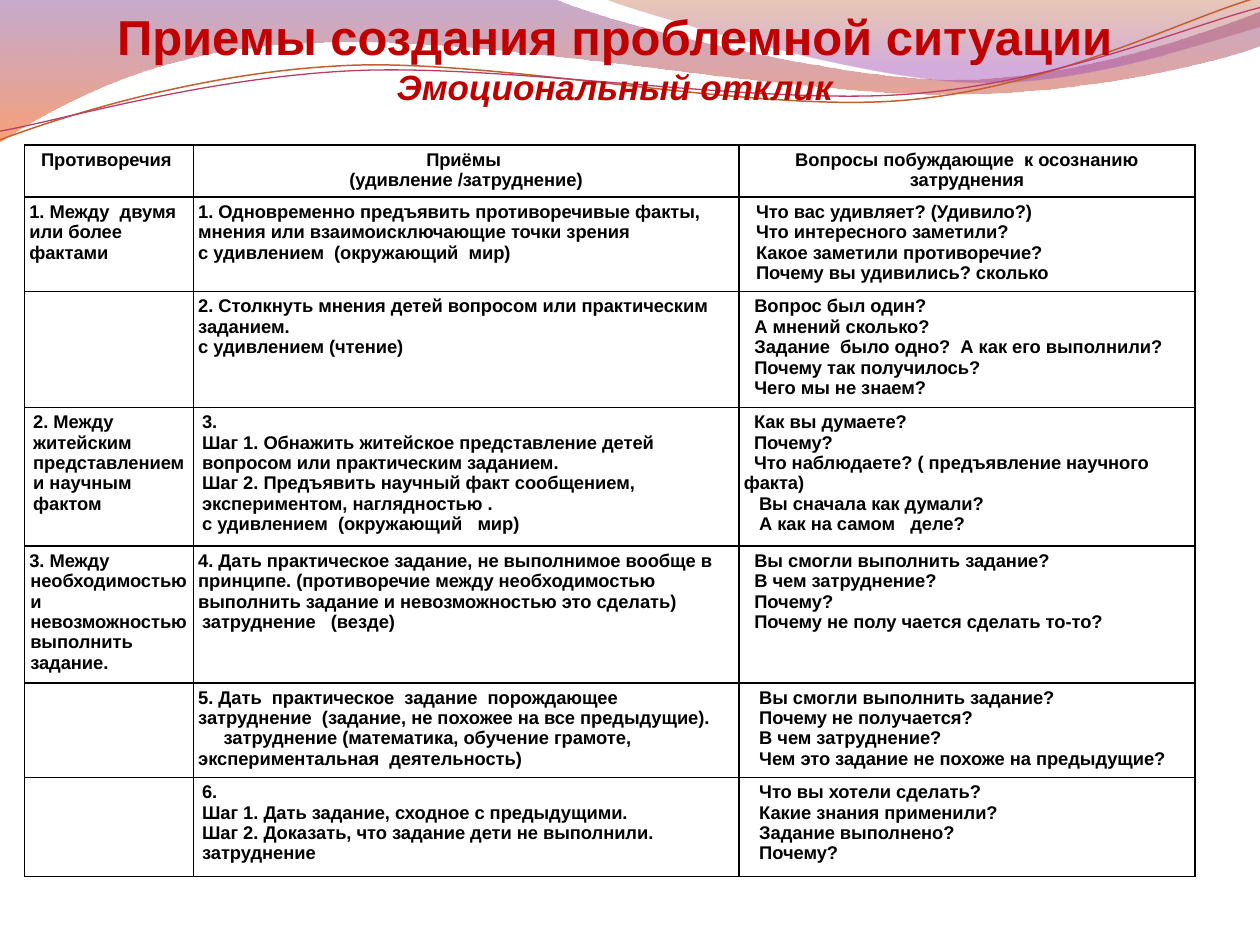
from pptx import Presentation
from pptx.dml.color import RGBColor
from pptx.enum.text import MSO_ANCHOR as Anchor, MSO_AUTO_SIZE as Auto, PP_ALIGN as Align
from pptx.oxml import parse_xml
from pptx.oxml.ns import nsdecls, qn
from pptx.util import Pt

RED = RGBColor(0xC0, 0x00, 0x00)
BLACK = RGBColor(0x00, 0x00, 0x00)
WHITE = RGBColor(0xFF, 0xFF, 0xFF)
PLUM = RGBColor(0x83, 0x45, 0x91)
FLAME = RGBColor(0xF3, 0x53, 0x07)
RUST = RGBColor(0xB7, 0x49, 0x15)
VIOLET = RGBColor(0xA1, 0x4B, 0xB4)
COPPER = RGBColor(0xC4, 0x5F, 0x30)
ROSE = RGBColor(0xB8, 0x3D, 0x68)

# Outlines: a start point, then lines (2 numbers) and Bezier curves (6 numbers).
WIDE_WAVE = [(0, -0.7), (316.8, -0.7),
             (342.7, 12.2, 478.1, 45.4, 545.8, 45.4), (614.2, 45.4, 689.8, 18.7, 720, 6.5),
             (720.7, 25.9), (707.8, 31.7, 626.4, 54.7, 537.1, 54),
             (447.8, 54, 275, 20.2, 185, 24.5), (92.9, 25.2, 33.1, 59.8, -0.7, 81.4)]
RIGHT_WAVE = [(344.9, -0.7), (366.5, 7.9, 491, 44.6, 553.7, 46.8),
              (616.3, 49.7, 691.9, 23, 720, 15.1), (720, 0)]
COPPER_LINE = [(0, 79.9), (34.6, 67, 113.8, 41, 199.4, 37.4),
               (284.4, 33.8, 427, 64.1, 513.4, 57.6), (599.8, 51.1, 675.4, 10.8, 718.6, -1.4)]
ROSE_LINE = [(0, 74.9), (33.8, 69.1, 118.1, 43.9, 203.8, 40.3),
             (290.2, 36.7, 429.8, 59.8, 516.2, 54), (601.9, 48.2, 677.5, 15.1, 720, 4.3)]


def lines(*texts, left=0, first=0):
    """Paragraphs that share a left margin and a first-line indent."""
    return [(text, left, first) for text in texts]


COLS = [96.5, 311.8, 260.6]
ROWS = [29.8, 54, 66.2, 79.2, 78.2, 54, 56.7]
CELLS = [
    [lines("Противоречия "),
     lines("Приёмы ", "(удивление /затруднение)"),
     lines("Вопросы побуждающие  к осознанию затруднения")],
    [lines("1. Между  двумя  или более фактами"),
     lines("1. Одновременно предъявить противоречивые факты,  "
           "мнения или взаимоисключающие точки зрения",
           "с удивлением  (окружающий  мир)"),
     lines("Что вас удивляет? (Удивило?)", "Что интересного заметили?",
           "Какое заметили противоречие?", "Почему вы удивились? сколько", left=7)],
    [[],
     lines("2. Столкнуть мнения детей вопросом или практическим заданием.",
           "с удивлением (чтение)"),
     lines("Вопрос был один?", "А мнений сколько?",
           "Задание  было одно?  А как его выполнили?",
           "Почему так получилось?", "Чего мы не знаем?", left=6)],
    [lines("2. Между житейским представлением и научным фактом", left=2.2),
     lines("3.",
           "Шаг 1. Обнажить житейское представление детей  вопросом или практическим заданием.",
           "Шаг 2. Предъявить научный факт сообщением, экспериментом, наглядностью .",
           "с удивлением  (окружающий   мир)", left=2.2),
     lines("Как вы думаете?", "Почему?",
           "Что наблюдаете? ( предъявление научного факта)", first=5.8)
     + lines("Вы сначала как думали?", "А как на самом   деле?", first=8.7)],
    [lines("3. Между необходимостью и невозможностью выполнить задание.",
           left=0.5, first=-0.5),
     lines("4. Дать практическое задание, не выполнимое вообще в принципе. (противоречие "
           "между необходимостью выполнить задание и невозможностью это сделать)")
     + lines("затруднение   (везде)", left=2.2),
     lines("Вы смогли выполнить задание?", "В чем затруднение?", "Почему?",
           "Почему не полу чается сделать то-то?", left=6)],
    [[],
     lines("5. Дать  практическое  задание  порождающее затруднение  "
           "(задание, не похожее на все предыдущие).")
     + lines("затруднение (математика, обучение грамоте, "
             "экспериментальная  деятельность)", first=14.5),
     lines("Вы смогли выполнить задание?", "Почему не получается?", "В чем затруднение?",
           "Чем это задание не похоже на предыдущие?", left=8.8)],
    [[],
     lines("6.", "Шаг 1. Дать задание, сходное с предыдущими.",
           "Шаг 2. Доказать, что задание дети не выполнили. затруднение", left=2.2),
     lines("Что вы хотели сделать?", "Какие знания применили?", "Задание выполнено?",
           "Почему?", left=8.8)],
]


def bend(shape, parts):
    """Turn the straight segments that stand for curves into Bezier curves."""
    segs = list(shape.element.iter(qn("a:lnTo")))
    for seg, part in zip(segs, parts):
        if len(part) == 6:
            points = "".join(
                f'<a:pt x="{Pt(x) - shape.left}" y="{Pt(y) - shape.top}"/>'
                for x, y in zip(part[::2], part[1::2]))
            curve = parse_xml(f'<a:cubicBezTo {nsdecls("a")}>{points}</a:cubicBezTo>')
            seg.getparent().replace(seg, curve)


class Deck:
    font = "Arial"
    small = 10.5
    inset = 2.8

    def __init__(self):
        self.prs = Presentation()
        self.prs.slide_width, self.prs.slide_height = Pt(720), Pt(540)
        self.slide = self.prs.slides.add_slide(self.prs.slide_layouts[5])

    def run(self, para, text, size, color, italic=False):
        run = para.add_run()
        run.text = text
        font = run.font
        font.name, font.size, font.bold, font.italic = self.font, Pt(size), True, italic
        font.color.rgb = color

    def outline(self, parts, close):
        ends = [(Pt(part[-2]), Pt(part[-1])) for part in parts]
        pen = self.slide.shapes.build_freeform(*ends[0], scale=1.0)
        pen.add_line_segments(ends[1:], close=close)
        shape = pen.convert_to_shape()
        shape.shadow.inherit = False
        bend(shape, parts[1:])
        return shape

    def wave(self, parts, *stops):
        """Each stop is a position, a colour and an opacity in percent."""
        shape = self.outline(parts, True)
        shape.line.fill.background()
        shape.fill.gradient()
        shape.fill.gradient_angle = 270
        for stop, (pos, color, _) in zip(shape.fill.gradient_stops, stops):
            stop.position = pos
            stop.color.rgb = color
        tags = shape.element.spPr.iter(qn("a:srgbClr"))
        for tag, (_, _, alpha) in zip(tags, stops):
            tag.append(parse_xml(f'<a:alpha {nsdecls("a")} val="{alpha * 1000}"/>'))

    def curve(self, parts, color, width):
        shape = self.outline(parts, False)
        shape.fill.background()
        shape.line.color.rgb = color
        shape.line.width = Pt(width)

    def title(self, main, sub):
        title = self.slide.shapes.title
        title.left, title.top, title.width, title.height = Pt(19.8), Pt(0), Pt(663), Pt(65.5)
        frame = title.text_frame
        frame.auto_size, frame.word_wrap = Auto.NONE, True
        frame.vertical_anchor = Anchor.MIDDLE
        para = frame.paragraphs[0]
        para.alignment = Align.CENTER
        self.run(para, main, 28, RED)
        para.add_line_break()
        self.run(para, sub, 20, RED, italic=True)
        title.element.getparent().append(title.element)  # in front of the waves

    def border(self, cell):
        props = cell._tc.get_or_add_tcPr()
        for side in "LRTB":
            props.append(parse_xml(
                f'<a:ln{side} {nsdecls("a")} w="{Pt(1)}"><a:solidFill>'
                f'<a:srgbClr val="{BLACK}"/></a:solidFill></a:ln{side}>'))

    def cell(self, cell, paras, align):
        cell.margin_left = cell.margin_right = Pt(self.inset)
        cell.margin_top = cell.margin_bottom = Pt(self.inset)
        self.border(cell)
        cell.fill.solid()
        cell.fill.fore_color.rgb = WHITE
        frame = cell.text_frame
        for i, (text, left, first) in enumerate(paras):
            para = frame.add_paragraph() if i else frame.paragraphs[0]
            para.alignment = align
            props = para._p.get_or_add_pPr()
            props.set("marL", str(Pt(left)))
            props.set("indent", str(Pt(first)))
            self.run(para, text, self.small, BLACK)

    def table(self, left, top, cols, rows, cells):
        table = self.slide.shapes.add_table(
            len(rows), len(cols), Pt(left), Pt(top), Pt(sum(cols)), Pt(sum(rows))).table
        for col, width in zip(table.columns, cols):
            col.width = Pt(width)
        for r, (row, height) in enumerate(zip(table.rows, rows)):
            row.height = Pt(height)
            for cell, paras in zip(row.cells, cells[r]):
                self.cell(cell, paras, Align.LEFT if r else Align.CENTER)


def main():
    deck = Deck()
    deck.wave(WIDE_WAVE, (0, PLUM, 45), (1, FLAME, 55))
    deck.wave(RIGHT_WAVE, (0, RUST, 30), (0.8, VIOLET, 45))
    deck.curve(COPPER_LINE, COPPER, 0.85)
    deck.curve(ROSE_LINE, ROSE, 0.75)
    deck.table(14, 82.8, COLS, ROWS, CELLS)
    deck.title("Приемы создания проблемной ситуации", "Эмоциональный отклик")
    deck.prs.save("out.pptx")


if __name__ == "__main__":
    main()
